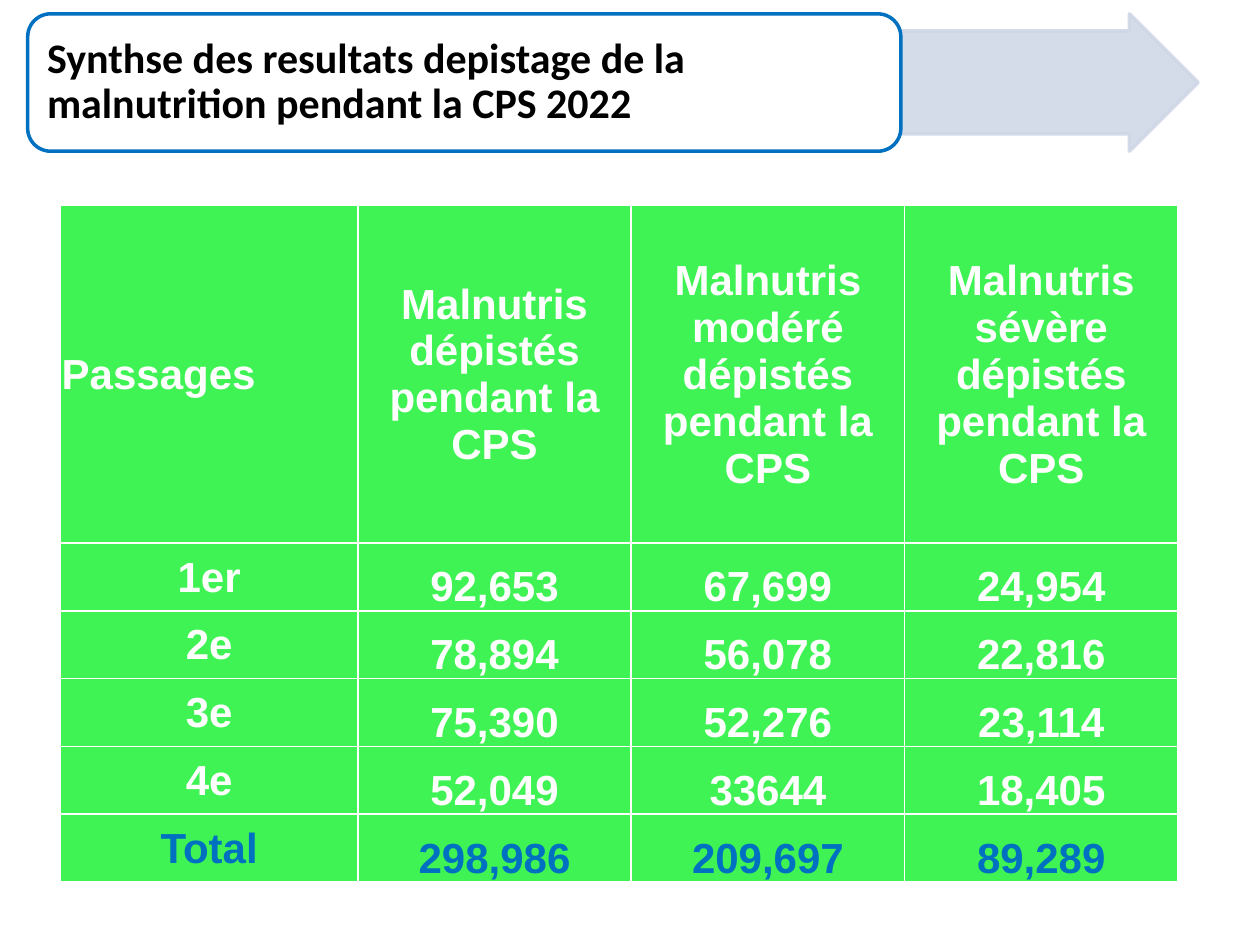
from lxml import etree
from pptx import Presentation
from pptx.dml.color import RGBColor
from pptx.enum.shapes import MSO_SHAPE
from pptx.enum.text import MSO_ANCHOR, PP_ALIGN
from pptx.oxml import parse_xml
from pptx.oxml.ns import nsdecls, qn
from pptx.util import Inches, Pt

COLORS = {"white": "FFFFFF", "black": "000000", "blue": "0070C0",
          "green": "3FF354", "pale": "CFD7E7"}

ROWS = [
    ["Passages", "Malnutris dépistés pendant la CPS",
     "Malnutris modéré dépistés pendant la CPS",
     "Malnutris sévère dépistés pendant la CPS"],
    ["1er", "92,653", "67,699", "24,954"],
    ["2e", "78,894", "56,078", "22,816"],
    ["3e", "75,390", "52,276", "23,114"],
    ["4e", "52,049", "33644", "18,405"],
    ["Total", "298,986", "209,697", "89,289"],
]


def rgb(name):
    return RGBColor.from_string(COLORS[name])


def add_run(para, text, font, color):
    run = para.add_run()
    run.text = text
    run.font.name = font
    run.font.size = Pt(24)
    run.font.bold = True
    run.font.color.rgb = rgb(color)


def add_box(slide, kind, box, fill, line):
    shape = slide.shapes.add_shape(kind, *map(Inches, box))
    shape.shadow.inherit = False
    shape.fill.solid()
    shape.fill.fore_color.rgb = rgb(fill)
    shape.line.color.rgb = rgb(line)
    shape.line.width = Pt(2)
    return shape


def add_title(slide, left, top, width, height):
    # Translucent arrow behind the title
    label = 6.93
    arrow = add_box(slide, MSO_SHAPE.RIGHT_ARROW,
                    (left + label, top, width - label, height), "pale", "pale")
    arrow.adjustments[0] = 0.75
    for color in arrow._element.spPr.iter(qn("a:srgbClr")):
        etree.SubElement(color, qn("a:alpha")).set("val", "89000")

    # Rounded frame
    add_box(slide, MSO_SHAPE.ROUNDED_RECTANGLE,
            (left, top, label, height), "white", "blue")

    # Title text, inset from the frame
    gap = 0.055
    area = (left + gap, top + gap, label - 2 * gap, height - 2 * gap)
    frame = slide.shapes.add_textbox(*map(Inches, area)).text_frame
    frame.word_wrap = True
    frame.vertical_anchor = MSO_ANCHOR.MIDDLE
    para = frame.paragraphs[0]
    para.line_spacing = 0.9
    add_run(para, "Synthse des resultats depistage de la malnutrition pendant la CPS 2022",
            "Calibri", "black")


def set_border(cell):
    props = cell._tc.get_or_add_tcPr()
    for place, side in enumerate(("lnL", "lnR", "lnT", "lnB")):
        props.insert(place, parse_xml(
            f'<a:{side} {nsdecls("a")} w="12700"><a:solidFill>'
            f'<a:srgbClr val="{COLORS["white"]}"/></a:solidFill></a:{side}>'))


def fill_cell(cell, text, row, col):
    cell.fill.solid()
    cell.fill.fore_color.rgb = rgb("green")
    set_border(cell)
    cell.margin_left = cell.margin_right = cell.margin_top = Inches(0.01)
    cell.margin_bottom = 0
    figure = row > 0 and col > 0
    cell.vertical_anchor = MSO_ANCHOR.BOTTOM if figure else MSO_ANCHOR.MIDDLE
    para = cell.text_frame.paragraphs[0]
    if row or col:
        para.alignment = PP_ALIGN.CENTER
    color = "blue" if row == len(ROWS) - 1 else "white"
    add_run(para, text, "Arial", color)


def add_counts(slide, left, top, width, height):
    table = slide.shapes.add_table(
        len(ROWS), len(ROWS[0]), *map(Inches, (left, top, width, height))).table

    # Wide first column and tall header; the rest share evenly
    first, head = 2.36, 2.68
    for col, column in enumerate(table.columns):
        column.width = Inches((width - first) / 3 if col else first)
    for row, line in enumerate(table.rows):
        line.height = Inches((height - head) / 5 if row else head)

    for row, texts in enumerate(ROWS):
        for col, text in enumerate(texts):
            fill_cell(table.cell(row, col), text, row, col)


def main():
    prs = Presentation()
    prs.slide_width, prs.slide_height = Inches(10), Inches(7.5)
    slide = prs.slides.add_slide(prs.slide_layouts[6])
    add_title(slide, 0.22, 0.11, 9.29, 1.09)
    add_counts(slide, 0.48, 1.63, 8.87, 5.37)
    prs.save("out.pptx")


if __name__ == "__main__":
    main()
